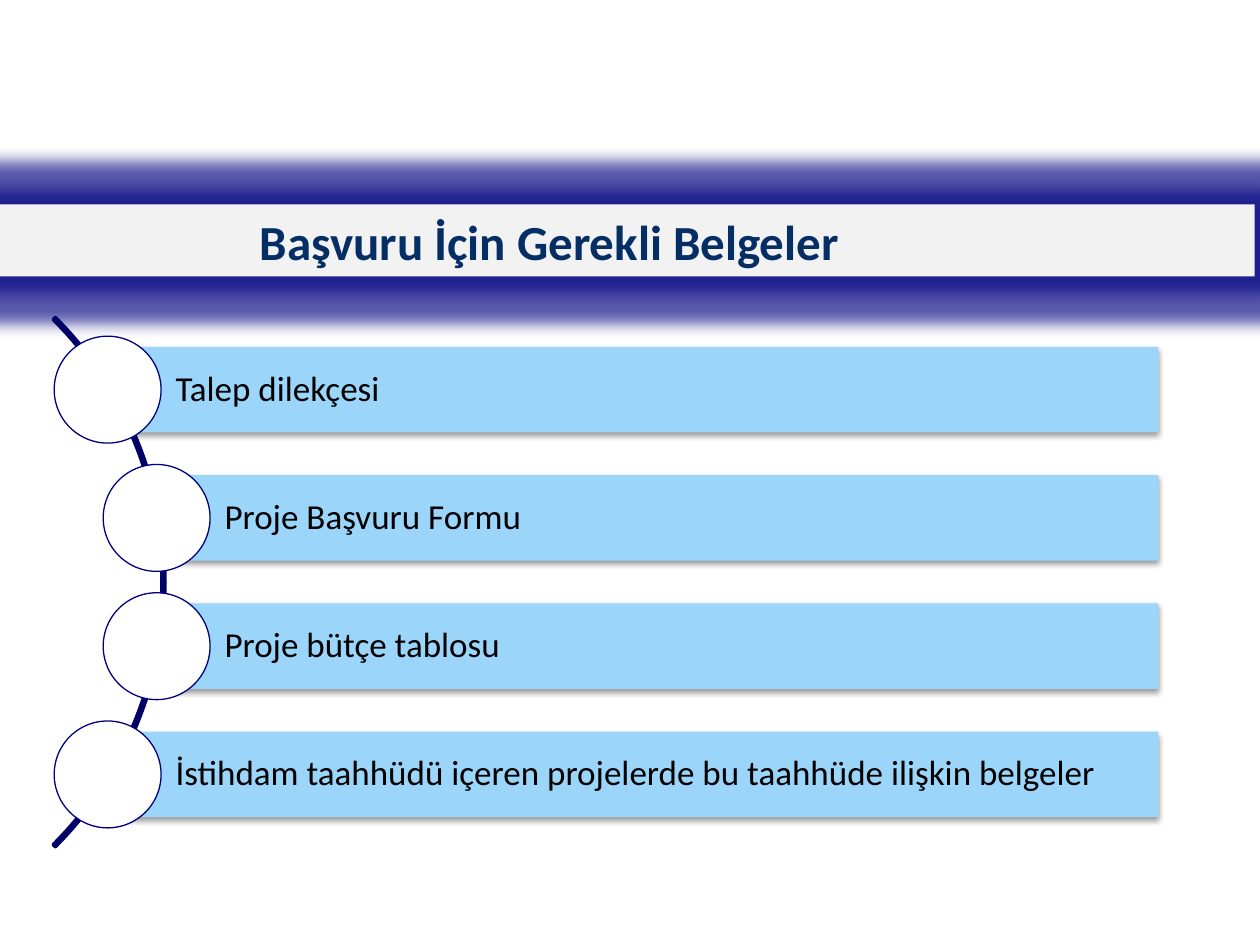
from lxml import etree
from pptx import Presentation
from pptx.dml.color import RGBColor
from pptx.enum import shapes as sh, text as tx
from pptx.oxml import parse_xml
from pptx.util import Pt

NS = "http://schemas.openxmlformats.org/drawingml/2006/main"
KIND = sh.MSO_SHAPE

deck = Presentation()
deck.slide_width, deck.slide_height = Pt(720), Pt(540)
slide = deck.slides.add_slide(deck.slide_layouts[6])


def rgb(code):
    return RGBColor.from_string(code)


def draw(kind, box, fill=None, line=None, width=0.75, effect=None,
         text=None, size=20, color="000000", bold=False, inset=(7.2, 3.6), space=1):
    """Add a shape; inset is the left margin, then the margin of the other sides."""
    item = slide.shapes.add_shape(kind, *[Pt(v) for v in box])
    item.shadow.inherit = False
    if fill:
        item.fill.solid()
        item.fill.fore_color.rgb = rgb(fill)
    else:
        item.fill.background()
    if line:
        item.line.color.rgb = rgb(line)
        item.line.width = Pt(width)
    else:
        item.line.fill.background()
    if effect:
        holder = item._element.spPr.find(f"{{{NS}}}effectLst")
        holder.append(parse_xml(effect))
    if text:
        frame = item.text_frame
        frame.word_wrap = True
        frame.vertical_anchor = tx.MSO_ANCHOR.MIDDLE
        frame.margin_left = Pt(inset[0])
        frame.margin_right = frame.margin_top = frame.margin_bottom = Pt(inset[1])
        para = frame.paragraphs[0]
        para.alignment = tx.PP_ALIGN.LEFT
        para.line_spacing = space
        run = para.add_run()
        run.text = text
        font = run.font
        font.name, font.size, font.bold = "Calibri", Pt(size), bold
        font.color.rgb = rgb(color)
    return item


glow = (f'<a:glow xmlns:a="{NS}" rad="{Pt(18)}"><a:srgbClr val="000080">'
        '<a:alpha val="65000"/></a:srgbClr></a:glow>')
shade = (f'<a:outerShdw xmlns:a="{NS}" blurRad="{Pt(3.1)}" dist="{Pt(1.6)}" '
         'dir="5400000" rotWithShape="0"><a:srgbClr val="000000">'
         '<a:alpha val="38000"/></a:srgbClr></a:outerShdw>')

# Title band
draw(KIND.RECTANGLE, (-3, 116.8, 720, 41.2), fill="F2F2F2", effect=glow,
     text="Başvuru İçin Gerekli Belgeler", size=28, color="052E65", bold=True,
     inset=(151.5, 3.6))

# Arc behind the list
arc = draw(KIND.BLOCK_ARC, (-333.4, 118.8, 427.7, 427.7), line="000067", width=2)
for i, value in enumerate((189, 27, 0.004)):
    arc.adjustments[i] = value
etree.SubElement(arc.line._get_or_add_ln(), f"{{{NS}}}round")

# Bars, each with a circle centred on its left edge
TOP, STEP, HIGH, RIGHT, DISC = 198.2, 73.3, 48.9, 662, 61.1
rows = [
    (61.5, "Talep dilekçesi"),
    (89.5, "Proje Başvuru Formu"),
    (89.5, "Proje bütçe tablosu"),
    (61.5, "İstihdam taahhüdü içeren projelerde bu taahhüde ilişkin belgeler"),
]
for i, (left, label) in enumerate(rows):
    top = TOP + i * STEP
    draw(KIND.RECTANGLE, (left, top, RIGHT - left, HIGH), fill="9BD5FA",
         effect=shade, text=label, inset=(38.8, 4), space=0.9)
    draw(KIND.OVAL, (left - DISC / 2, top + (HIGH - DISC) / 2, DISC, DISC),
         fill="FFFFFF", line="000080")

deck.save("out.pptx")
